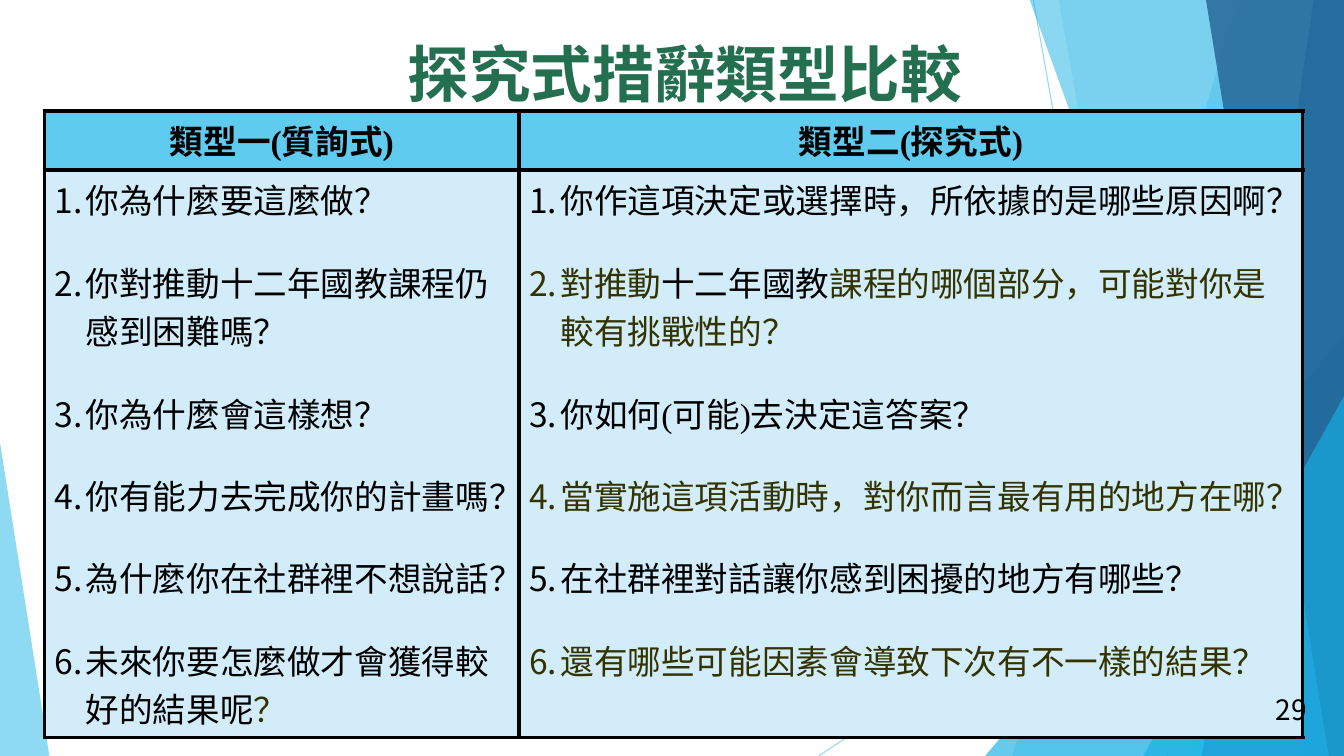
"""Build the slide comparing two types of inquiry wording."""
from lxml.etree import SubElement
from pptx import Presentation
from pptx.dml.color import RGBColor
from pptx.enum.shapes import MSO_CONNECTOR, MSO_SHAPE
from pptx.enum.text import MSO_ANCHOR, PP_ALIGN
from pptx.oxml import parse_xml
from pptx.oxml.ns import nsdecls, qn
from pptx.util import Pt

PX = 9144
W, H = 1333, 750
THEME = {
    "sky": "5FCBEF", "cyan": "17B0E4", "blue": "2E83C3", "navy": "226292",
    "pale": "D2ECF9", "green": "236F50", "olive": "333300", "black": "000000",
    "title": 44, "body": 24, "number": 20, "border": 3, "hairline": 0.75,
    "sans": "Noto Sans CJK SC", "serif": "Times New Roman", "head": "Arial",
}


def add_text(p, text, size=THEME["body"], font=THEME["serif"], color=THEME["black"], bold=False):
    r = p.add_run()
    r.text = text
    r.font.size = Pt(size)
    r.font.name = font
    r.font.bold = bold
    r.font.color.rgb = RGBColor.from_string(color)
    SubElement(r.font._element, qn("a:ea")).set("typeface", THEME["sans"])


def paint(fmt, color, alpha):
    fmt.solid()
    fmt.fore_color.rgb = RGBColor.from_string(color)
    clr = fmt._xPr.find(qn("a:solidFill"))[0]
    SubElement(clr, qn("a:alpha")).set("val", str(alpha * 1000))


prs = Presentation()
prs.slide_width, prs.slide_height = W * PX, H * PX
s = prs.slides.add_slide(prs.slide_layouts[6])

for ends in [(1025, 0, 1158, H), (W, 403, 812, H)]:
    cn = s.shapes.add_connector(MSO_CONNECTOR.STRAIGHT, *[v * PX for v in ends])
    cn.line.width = Pt(THEME["hairline"])
    paint(cn.line.fill, THEME["sky"], 70)
    SubElement(cn._element.spPr, qn("a:effectLst"))

FACETS = [
    ("band", (1228, 1004), "sky", 36),
    ("band", (1050, 1183), "sky", 20),
    ("triangle", (977, 333, 356, 417, 1), "cyan", 66),
    ("band", (1021, 1291), "cyan", 50),
    ("band", (1303, 1192), "blue", 70),
    ("band", (1196, 1318), "navy", 80),
    ("triangle", (1134, 393, 199, 357, 1), "cyan", 66),
    ("triangle", (0, 439, 49, 311, 0), "sky", 70),
]
for kind, geometry, color, alpha in FACETS:
    if kind == "band":
        top, bottom = geometry
        fb = s.shapes.build_freeform(top, -1, scale=PX)
        fb.add_line_segments([(W, -1), (W, H), (bottom, H)], close=True)
        sp = fb.convert_to_shape()
    else:
        *box, apex = geometry
        sp = s.shapes.add_shape(MSO_SHAPE.ISOSCELES_TRIANGLE, *[v * PX for v in box])
        sp.adjustments[0] = apex
    sp.shadow.inherit = False
    sp.line.fill.background()
    paint(sp.fill, THEME[color], alpha)

HEADERS = ["類型一(質詢式)", "類型二(探究式)"]
QUESTIONS = [
    [
        [("你為什麼要這麼做？", "black")],
        [("你對推動十二年國教課程仍感到困難嗎？", "black")],
        [("你為什麼會這樣想？", "black")],
        [("你有能力去完成你的計畫嗎？", "black")],
        [("為什麼你在社群裡不想說話？", "black")],
        [("未來你要怎麼做才會獲得較好的結果呢", "black"), ("？", "olive")],
    ],
    [
        [("你作這項決定或選擇時，所依據的是哪些原因啊？", "black")],
        [("對推動", "olive"), ("十二年國教", "black"),
         ("課程的哪個部分，可能對你是較有挑戰性的？", "olive")],
        [("你如何(可能)去決定這答案？", "black")],
        [("當實施這項活動時，對你而言最有用的地方在哪？", "olive")],
        [("在社群裡對話讓你感到困擾的地方有哪些？", "black")],
        [("還有哪些可能因素會導致下次有不一樣的結果？", "olive")],
    ],
]
COLS, ROWS = [471, 777], [50, 529]
frame = s.shapes.add_table(2, 2, 44 * PX, 110 * PX, sum(COLS) * PX, sum(ROWS) * PX)
tbl = frame.table
tbl.first_row = tbl.horz_banding = False
for row, height in zip(tbl.rows, ROWS):
    row.height = height * PX
for i, width in enumerate(COLS):
    tbl.columns[i].width = width * PX
    head, body = tbl.cell(0, i), tbl.cell(1, i)
    p = head.text_frame.paragraphs[0]
    p.alignment = PP_ALIGN.CENTER
    p.space_before = p.space_after = Pt(6)
    add_text(p, HEADERS[i], bold=True)
    tf = body.text_frame
    for n, runs in enumerate(QUESTIONS[i]):
        p = tf.add_paragraph() if n else tf.paragraphs[0]
        p.space_before = p.space_after = Pt(12)
        pPr = p._p.get_or_add_pPr()
        pPr.set("marL", str(31 * PX))
        pPr.set("indent", str(-31 * PX))
        SubElement(pPr, qn("a:buFont")).set("typeface", THEME["sans"])
        SubElement(pPr, qn("a:buAutoNum")).set("type", "arabicPeriod")
        for text, color in runs:
            add_text(p, text, color=THEME[color])
    for cell, color in [(head, "sky"), (body, "pale")]:
        cell.margin_left = cell.margin_right = 10 * PX
        cell.margin_top = cell.margin_bottom = 5 * PX
        cell.fill.solid()
        cell.fill.fore_color.rgb = RGBColor.from_string(THEME[color])
        tcPr = cell._tc.get_or_add_tcPr()
        for k, side in enumerate("LRTB"):
            tcPr.insert(k, parse_xml(
                f'<a:ln{side} {nsdecls("a")} w="{Pt(THEME["border"])}"><a:solidFill>'
                f'<a:srgbClr val="{THEME["black"]}"/></a:solidFill></a:ln{side}>'))

LABELS = [
    ((175, 28, 1009, 88), "探究式措辭類型比較",
     dict(size=THEME["title"], font=THEME["head"], color=THEME["green"], bold=True)),
    ((1246, 679, 69, 50), "29", dict(size=THEME["number"], font=THEME["sans"])),
]
for box, text, style in LABELS:
    tf = s.shapes.add_textbox(*[v * PX for v in box]).text_frame
    tf.word_wrap = True
    tf.vertical_anchor = MSO_ANCHOR.MIDDLE
    p = tf.paragraphs[0]
    p.alignment = PP_ALIGN.CENTER
    add_text(p, text, **style)

prs.save("out.pptx")
